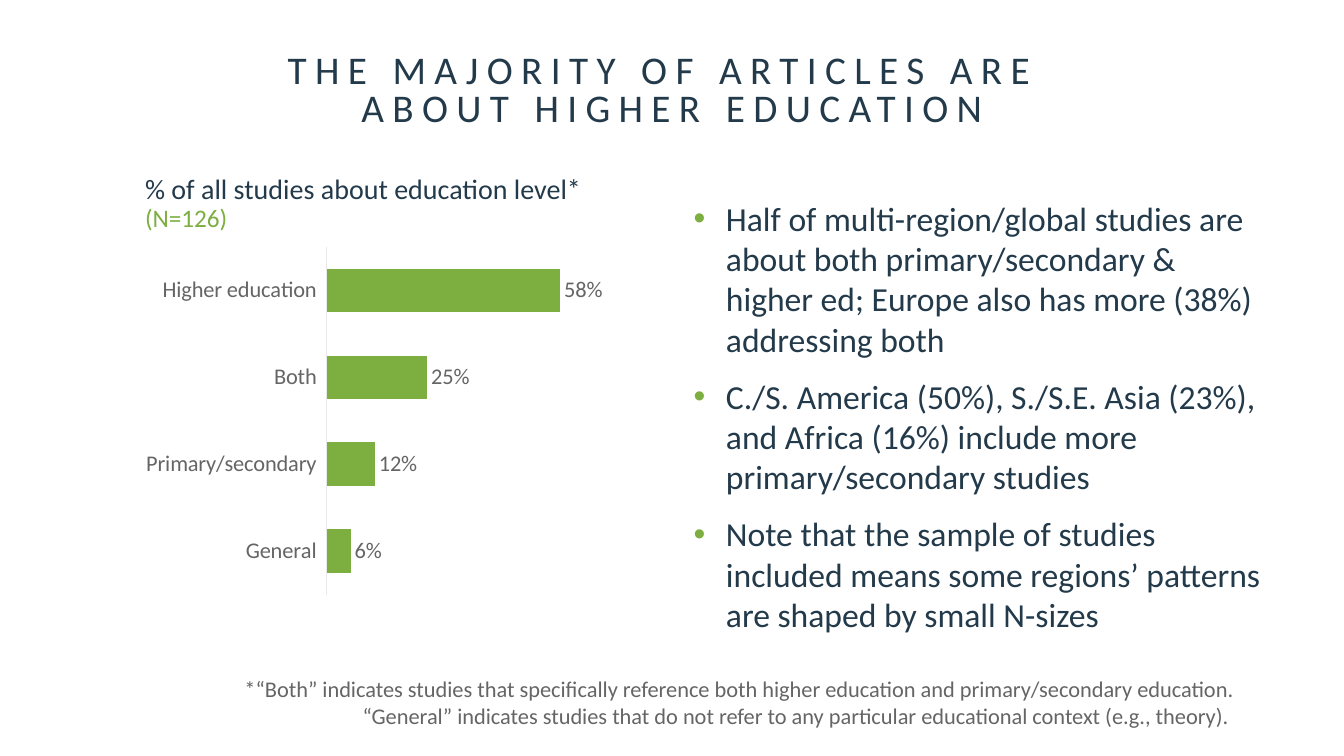
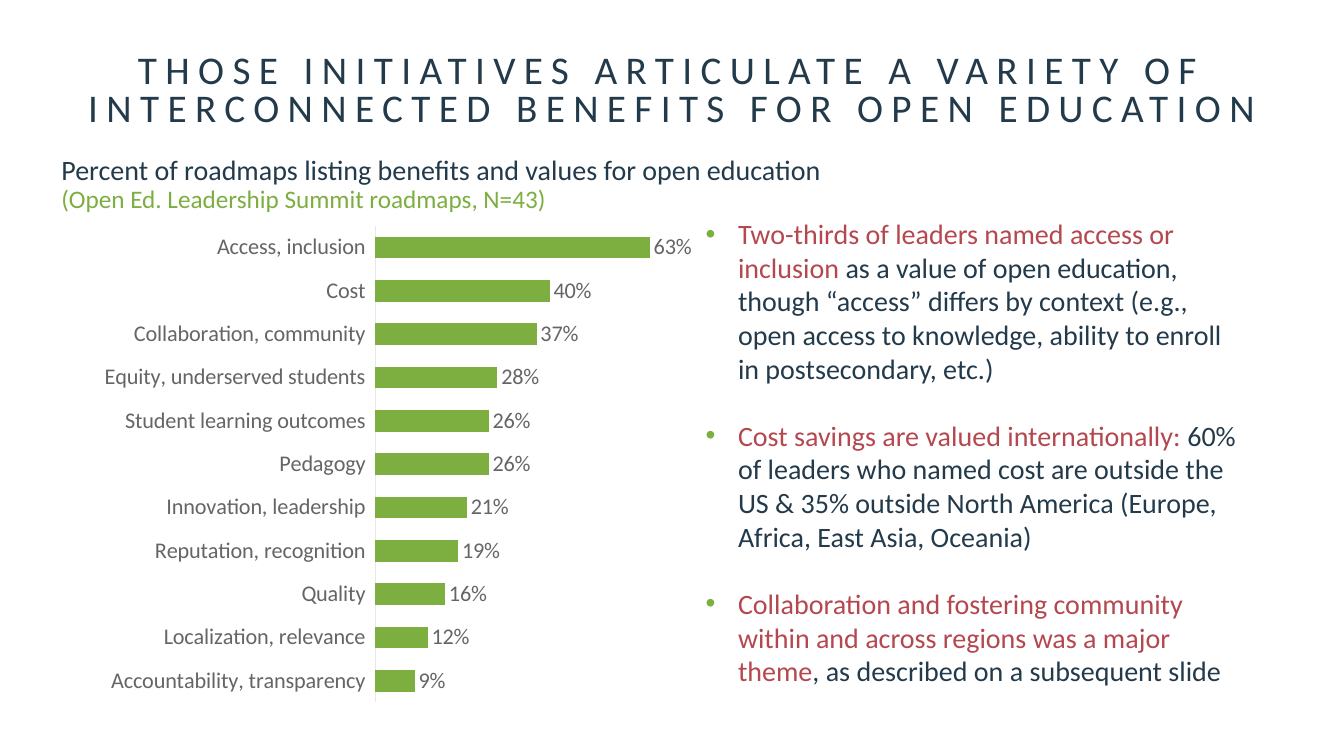
"""Build two slides on open education, each with a bar chart and bullet points."""
from lxml.etree import SubElement
from pptx import Presentation
from pptx.chart.data import CategoryChartData
from pptx.dml.color import RGBColor
from pptx.enum.chart import XL_CHART_TYPE, XL_LABEL_POSITION, XL_TICK_LABEL_POSITION, XL_TICK_MARK
from pptx.enum.text import MSO_ANCHOR, PP_ALIGN
from pptx.oxml import parse_xml
from pptx.oxml.ns import nsdecls, qn
from pptx.util import Inches, Pt

FONT = "Calibri"
NAVY = "233A4B"
GREEN = "7CAE40"
RED = "B5474F"
GRAY = "656565"
PALE = "E8E8E8"
BULLET_INDENT = 0.32
AXIS_MAXIMUM = 0.7


def rgb(color):
    """Turn a hex string into a colour."""
    return RGBColor.from_string(color)


def set_font(font, size, color):
    """Apply the shared typeface with a size and colour."""
    font.name = FONT
    font.size = Pt(size)
    font.color.rgb = rgb(color)


def add_bullet(para):
    """Give a paragraph a hanging green bullet."""
    properties = para._p.get_or_add_pPr()
    properties.set("marL", str(Inches(BULLET_INDENT)))
    properties.set("indent", str(-Inches(BULLET_INDENT)))
    bullet_color = SubElement(properties, qn("a:buClr"))
    SubElement(bullet_color, qn("a:srgbClr"), val=GREEN)
    SubElement(properties, qn("a:buFont"), typeface="Arial")
    SubElement(properties, qn("a:buChar"), char="•")


def add_spans(para, spans, size, color, tracking):
    """Fill a paragraph with spans of (text, colour, size), splitting lines at newlines."""
    for text, *style in spans:
        span_color, span_size = style + [color, size][len(style):]
        for number, line in enumerate(text.split("\n")):
            if number:
                para.add_line_break()
            if line:
                span = para.add_run()
                span.text = line
                set_font(span.font, span_size, span_color)
                if tracking:
                    span._r.get_or_add_rPr().set("spc", str(tracking * 100))


def add_text(page, place, paragraphs, size=20, color=NAVY, align=PP_ALIGN.LEFT,
             spacing=None, gap=0, tracking=0, bullets=False, inset=None):
    """Add a text box whose paragraphs are lists of spans."""
    box = page.shapes.add_textbox(*map(Inches, place))
    frame = box.text_frame
    frame.word_wrap = True
    frame.vertical_anchor = MSO_ANCHOR.TOP
    if inset is not None:
        frame.margin_left = frame.margin_right = Inches(inset)
        frame.margin_top = frame.margin_bottom = Inches(inset)
    for number, spans in enumerate(paragraphs):
        para = frame.add_paragraph() if number else frame.paragraphs[0]
        if bullets:
            add_bullet(para)
        para.alignment = align
        if spacing:
            para.line_spacing = spacing
        if number:
            para.space_before = Pt(gap)
        add_spans(para, spans, size, color, tracking)


def add_title(page, left, width, text):
    """Add the widely tracked, centred slide title."""
    add_text(page, (left, 0.54, width, 1), [[(text,)]], size=28,
             align=PP_ALIGN.CENTER, spacing=0.8, tracking=6, inset=0)


def add_chart_heading(page, place, heading, sample):
    """Add the chart heading with its sample size in green below."""
    add_text(page, place, [[(heading + "\n",), (sample, GREEN, 18)]], spacing=0.9)


def add_bullets(page, place, paragraphs, size, gap):
    """Add the bullet points beside the chart."""
    add_text(page, place, paragraphs, size=size, gap=gap, bullets=True, inset=0)


def set_plot_layout(chart, plot_box):
    """Fix the inner plot area as fractions of the chart frame."""
    area = chart._chartSpace.find(qn("c:chart")).find(qn("c:plotArea"))
    for layout in area.findall(qn("c:layout")):
        area.remove(layout)
    modes = "".join(f'<c:{name} val="edge"/>' for name in ("xMode", "yMode"))
    sizes = "".join(f'<c:{name} val="{value}"/>' for name, value in zip("xywh", plot_box))
    area.insert(0, parse_xml(
        f'<c:layout {nsdecls("c")}><c:manualLayout><c:layoutTarget val="inner"/>'
        f'{modes}{sizes}</c:manualLayout></c:layout>'))


def add_bar_chart(page, place, shares, plot_box):
    """Add a horizontal bar chart of percentages, first category on top."""
    data = CategoryChartData(number_format="0%")
    data.categories = list(shares)
    data.add_series("Series 1", list(shares.values()))
    chart = page.shapes.add_chart(
        XL_CHART_TYPE.BAR_CLUSTERED, *map(Inches, place), data).chart
    chart.has_legend = False
    chart.has_title = False
    set_font(chart.font, 16, GRAY)

    categories = chart.category_axis
    categories.reverse_order = True
    categories.has_major_gridlines = False
    categories.major_tick_mark = XL_TICK_MARK.NONE
    categories.minor_tick_mark = XL_TICK_MARK.NONE
    categories.tick_label_position = XL_TICK_LABEL_POSITION.LOW
    categories.format.line.color.rgb = rgb(PALE)
    categories.format.line.width = Pt(0.75)

    values = chart.value_axis
    values.minimum_scale = 0
    values.maximum_scale = AXIS_MAXIMUM
    values.has_major_gridlines = False
    values.visible = False

    plot = chart.plots[0]
    plot.gap_width = 100
    plot.vary_by_categories = False
    fill = plot.series[0].format.fill
    fill.solid()
    fill.fore_color.rgb = rgb(GREEN)
    plot.has_data_labels = True
    labels = plot.data_labels
    labels.show_value = True
    labels.number_format = "0%"
    labels.number_format_is_linked = False
    labels.position = XL_LABEL_POSITION.OUTSIDE_END
    set_font(labels.font, 16, GRAY)
    set_plot_layout(chart, plot_box)


def add_page(deck):
    """Add a blank slide."""
    return deck.slides.add_slide(deck.slide_layouts[6])


def build_education_level(deck):
    """Build the slide on education levels."""
    page = add_page(deck)
    add_title(page, 1, 11.33, "THE MAJORITY OF ARTICLES ARE \nABOUT HIGHER EDUCATION")
    add_bullets(page, (6.88, 1.96, 5.72, 4.39), [
        [("Half of multi-region/global studies are about both primary/secondary "
          "& higher ed; Europe also has more (38%) addressing both",)],
        [("C./S. America (50%), S./S.E. Asia (23%), and Africa (16%) include more "
          "primary/secondary studies",)],
        [("Note that the sample of studies included means some regions’ patterns "
          "are shaped by small N-sizes",)],
    ], size=24, gap=12)
    add_bar_chart(page, (1.18, 2.3, 5.28, 3.75), {
        "Higher education": 0.58,
        "Both": 0.25,
        "Primary/secondary": 0.12,
        "General": 0.06,
    }, (0.39, 0.04, 0.53, 0.92))
    add_chart_heading(page, (1.34, 1.69, 5.28, 0.73),
                      "% of all studies about education level*", "(N=126)")
    add_text(page, (2.3, 6.65, 10.04, 0.64), [[
        ("*“Both” indicates studies that specifically reference both higher education "
         "and primary/secondary education. “General” indicates studies that do not refer "
         "to any particular educational context (e.g., theory). ",),
    ]], size=16, color=GRAY, align=PP_ALIGN.RIGHT)


def build_benefits(deck):
    """Build the slide on benefits of open education."""
    page = add_page(deck)
    add_title(page, 0.75, 11.83, "THOSE INITIATIVES ARTICULATE A VARIETY OF "
                                 "INTERCONNECTED BENEFITS FOR OPEN EDUCATION")
    add_bullets(page, (7, 2.15, 5.33, 3.5), [
        [("Two-thirds of leaders named access or inclusion ", RED),
         ("as a value of open education, though “access” differs by context (e.g., open "
          "access to knowledge, ability to enroll in postsecondary, etc.)",)],
        [("Cost savings are valued internationally: ", RED),
         ("60% of leaders who named cost are outside the US & 35% outside North America "
          "(Europe, Africa, East Asia, Oceania)",)],
        [("Collaboration and fostering community within and across regions was a major "
          "theme", RED),
         (", as described on a subsequent slide",)],
    ], size=20, gap=24)
    add_bar_chart(page, (0.51, 2.09, 6.35, 5.03), {
        "Access, inclusion": 0.63,
        "Cost": 0.4,
        "Collaboration, community": 0.37,
        "Equity, underserved students": 0.28,
        "Student learning outcomes": 0.26,
        "Pedagogy": 0.26,
        "Innovation, leadership": 0.21,
        "Reputation, recognition": 0.19,
        "Quality": 0.16,
        "Localization, relevance": 0.12,
        "Accountability, transparency": 0.09,
    }, (0.51, 0.03, 0.48, 0.94))
    add_chart_heading(page, (0.51, 1.5, 12.51, 0.73),
                      "Percent of roadmaps listing benefits and values for open education",
                      "(Open Ed. Leadership Summit roadmaps, N=43)")


def main():
    """Build and save the deck."""
    deck = Presentation()
    deck.slide_width = Inches(13.33)
    deck.slide_height = Inches(7.5)
    build_education_level(deck)
    build_benefits(deck)
    deck.save("out.pptx")


if __name__ == "__main__":
    main()
